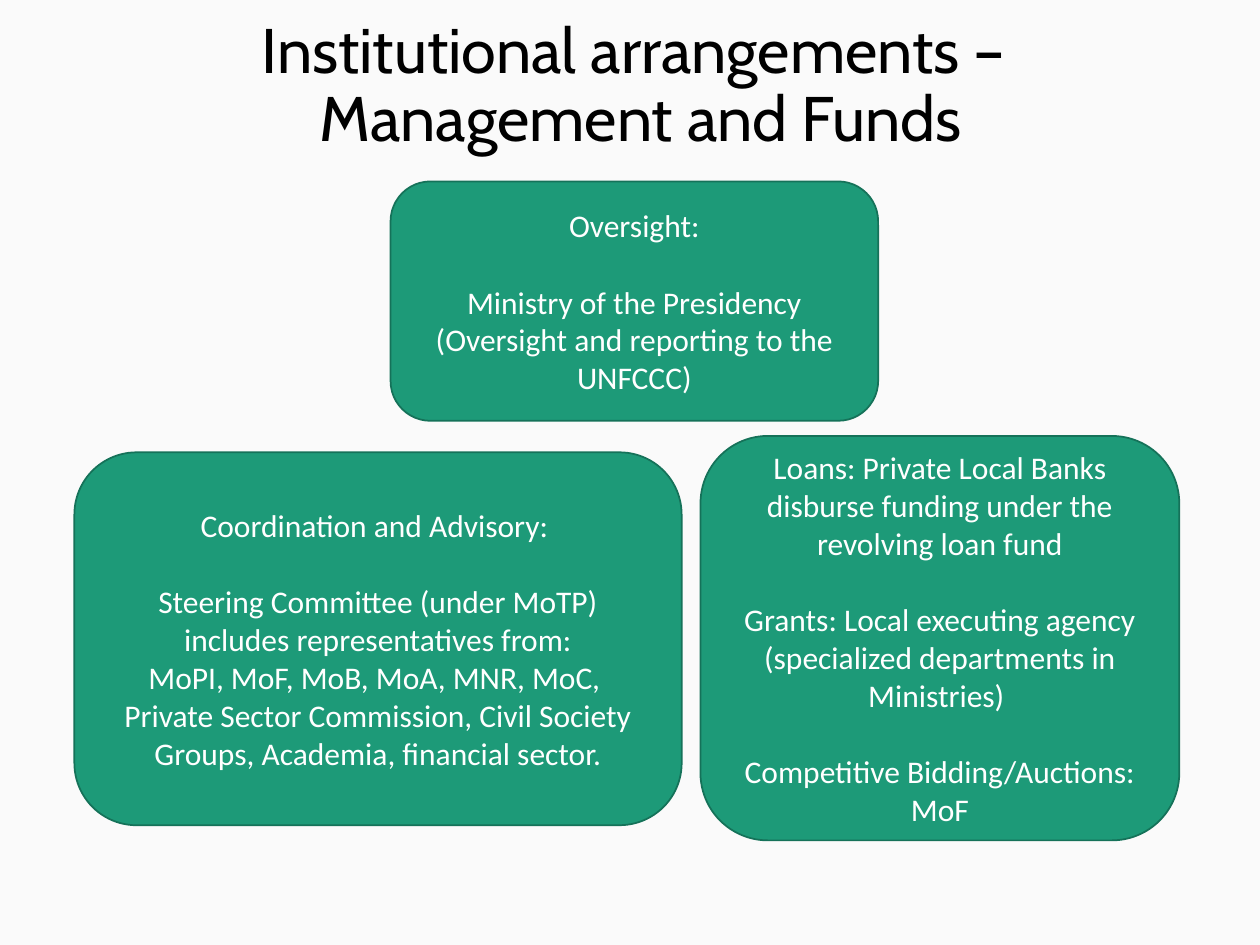
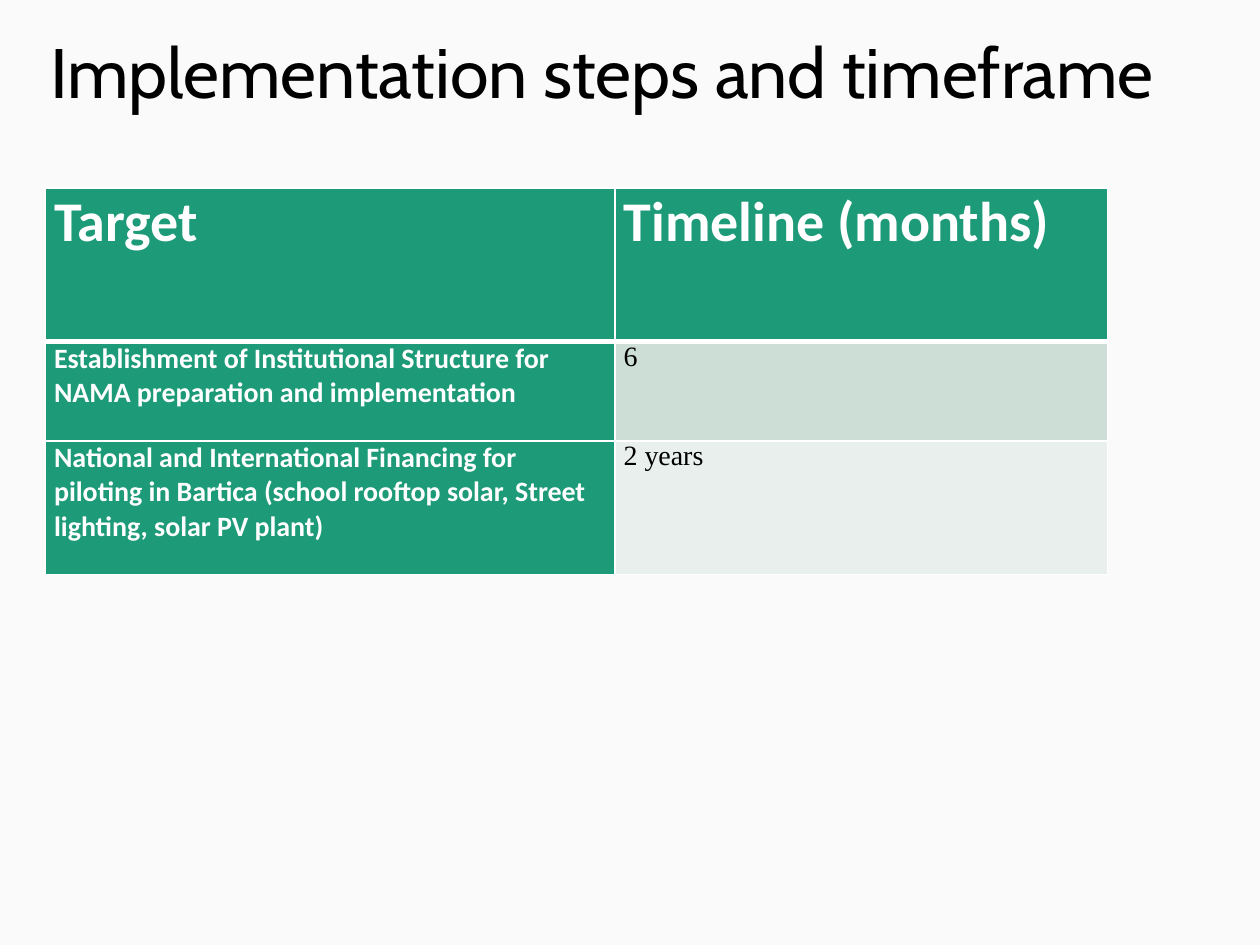
from dataclasses import dataclass

from lxml import etree
from pptx import Presentation
from pptx.dml.color import RGBColor
from pptx.enum import shapes, text
from pptx.oxml import ns
from pptx.util import Inches, Pt


@dataclass(frozen=True)
class Theme:
    background: str = "FAFAFA"
    green: str = "1D9A78"
    outline: str = "157259"
    bands: tuple = ("CDDED6", "E8EFEC")
    light: str = "FFFFFF"
    dark: str = "000000"
    title_font: str = "Cabin"
    body_font: str = "Calibri"
    value_font: str = "Times New Roman"
    box_size: int = 18
    header_size: int = 32
    row_size: int = 16
    section_gap: int = 22


THEME = Theme()

# Title: text, (left, top, width, height), size, alignment
ARRANGEMENTS_TITLE = ("Institutional arrangements – \vManagement and Funds",
                      (0.17, 0.1, 9.83, 1.18), 36, text.PP_ALIGN.CENTER)
TIMEFRAME_TITLE = ("Implementation steps and timeframe",
                   (0.3, 0, 9.37, 1.21), 40, text.PP_ALIGN.LEFT)

# Each box: place, then sections that are lists of paragraphs
ROLE_BOXES = [
    ((3.1, 1.44, 3.87, 1.9), [
        ["Oversight:"],
        ["Ministry of the Presidency",
         "(Oversight and reporting to the UNFCCC)"],
    ]),
    ((0.59, 3.59, 4.82, 2.96), [
        ["Coordination and Advisory: "],
        ["Steering Committee (under MoTP) includes representatives from:",
         "MoPI, MoF, MoB, MoA, MNR, MoC,  Private Sector Commission, "
         "Civil Society Groups, Academia, financial sector."],
    ]),
    ((5.56, 3.46, 3.8, 3.21), [
        ["Loans: Private Local Banks disburse funding under the revolving loan fund"],
        ["Grants: Local executing agency (specialized departments in Ministries) "],
        ["Competitive Bidding/Auctions: MoF"],
    ]),
]

STEPS = [
    ("Target", "Timeline (months)"),
    ("Establishment of Institutional Structure for NAMA preparation and "
     "implementation", "6"),
    ("National and International Financing for piloting in Bartica "
     "(school rooftop solar, Street lighting, solar PV plant)", "2 years"),
]
TABLE_CORNER = (0.36, 1.49)
COLUMN_WIDTHS = (4.52, 3.91)
ROW_HEIGHTS = (1.22, 0.79, 1.06)


def color(value):
    return RGBColor.from_string(value)


def inches(place):
    return [Inches(length) for length in place]


def style(para, font, size, ink, bold=False):
    for span in para.runs:
        span.font.name = font
        span.font.size = Pt(size)
        span.font.color.rgb = color(ink)
        span.font.bold = bold


def add_slide(deck, title):
    words, place, size, alignment = title
    slide = deck.slides.add_slide(deck.slide_layouts[6])
    slide.background.fill.solid()
    slide.background.fill.fore_color.rgb = color(THEME.background)
    frame = slide.shapes.add_textbox(*inches(place)).text_frame
    frame.word_wrap = True
    frame.vertical_anchor = text.MSO_ANCHOR.MIDDLE
    para = frame.paragraphs[0]
    para.text = words
    para.alignment = alignment
    para.line_spacing = 0.9
    style(para, THEME.title_font, size, THEME.dark)
    return slide


def add_role_box(slide, place, sections):
    box = slide.shapes.add_shape(shapes.MSO_SHAPE.ROUNDED_RECTANGLE, *inches(place))
    box.shadow.inherit = False
    box.fill.solid()
    box.fill.fore_color.rgb = color(THEME.green)
    box.line.color.rgb = color(THEME.outline)
    box.line.width = Pt(1)
    frame = box.text_frame
    frame.word_wrap = True
    frame.vertical_anchor = text.MSO_ANCHOR.MIDDLE
    frame.text = "\n".join(line for section in sections for line in section)
    paragraphs = iter(frame.paragraphs)
    for number, section in enumerate(sections):
        for position in range(len(section)):
            para = next(paragraphs)
            para.alignment = text.PP_ALIGN.CENTER
            if number and not position:
                para.space_before = Pt(THEME.section_gap)
            style(para, THEME.body_font, THEME.box_size, THEME.light)


def set_borders(cell, widths):
    """Draw light borders; widths are points for left, right, top, bottom."""
    properties = cell._tc.get_or_add_tcPr()
    for index, (side, width) in enumerate(zip("LRTB", widths)):
        line = etree.Element(ns.qn(f"a:ln{side}"), w=str(Pt(width)))
        fill = etree.SubElement(line, ns.qn("a:solidFill"))
        etree.SubElement(fill, ns.qn("a:srgbClr"), val=THEME.light)
        properties.insert(index, line)


def add_steps_table(slide):
    size = (sum(COLUMN_WIDTHS), sum(ROW_HEIGHTS))
    table = slide.shapes.add_table(len(STEPS), len(COLUMN_WIDTHS),
                                   *inches(TABLE_CORNER + size)).table
    for column, width in zip(table.columns, COLUMN_WIDTHS):
        column.width = Inches(width)
    for row, height in zip(table.rows, ROW_HEIGHTS):
        row.height = Inches(height)
    for r, step in enumerate(STEPS):
        for c, words in enumerate(step):
            cell = table.cell(r, c)
            is_value = r > 0 and c > 0
            cell.text_frame.text = words
            cell.margin_left = cell.margin_right = Inches(0.07)
            cell.margin_top = cell.margin_bottom = 0
            cell.fill.solid()
            cell.fill.fore_color.rgb = color(
                THEME.bands[r - 1] if is_value else THEME.green)
            style(cell.text_frame.paragraphs[0],
                  THEME.value_font if is_value else THEME.body_font,
                  THEME.row_size if r else THEME.header_size,
                  THEME.dark if is_value else THEME.light,
                  bold=not is_value)
            set_borders(cell, (1, 1, 3 if r == 1 else 1, 3 if r == 0 else 1))


def main():
    deck = Presentation()
    deck.slide_width, deck.slide_height = Inches(10), Inches(7.5)
    arrangements = add_slide(deck, ARRANGEMENTS_TITLE)
    for place, sections in ROLE_BOXES:
        add_role_box(arrangements, place, sections)
    add_steps_table(add_slide(deck, TIMEFRAME_TITLE))
    deck.save("out.pptx")


if __name__ == "__main__":
    main()
